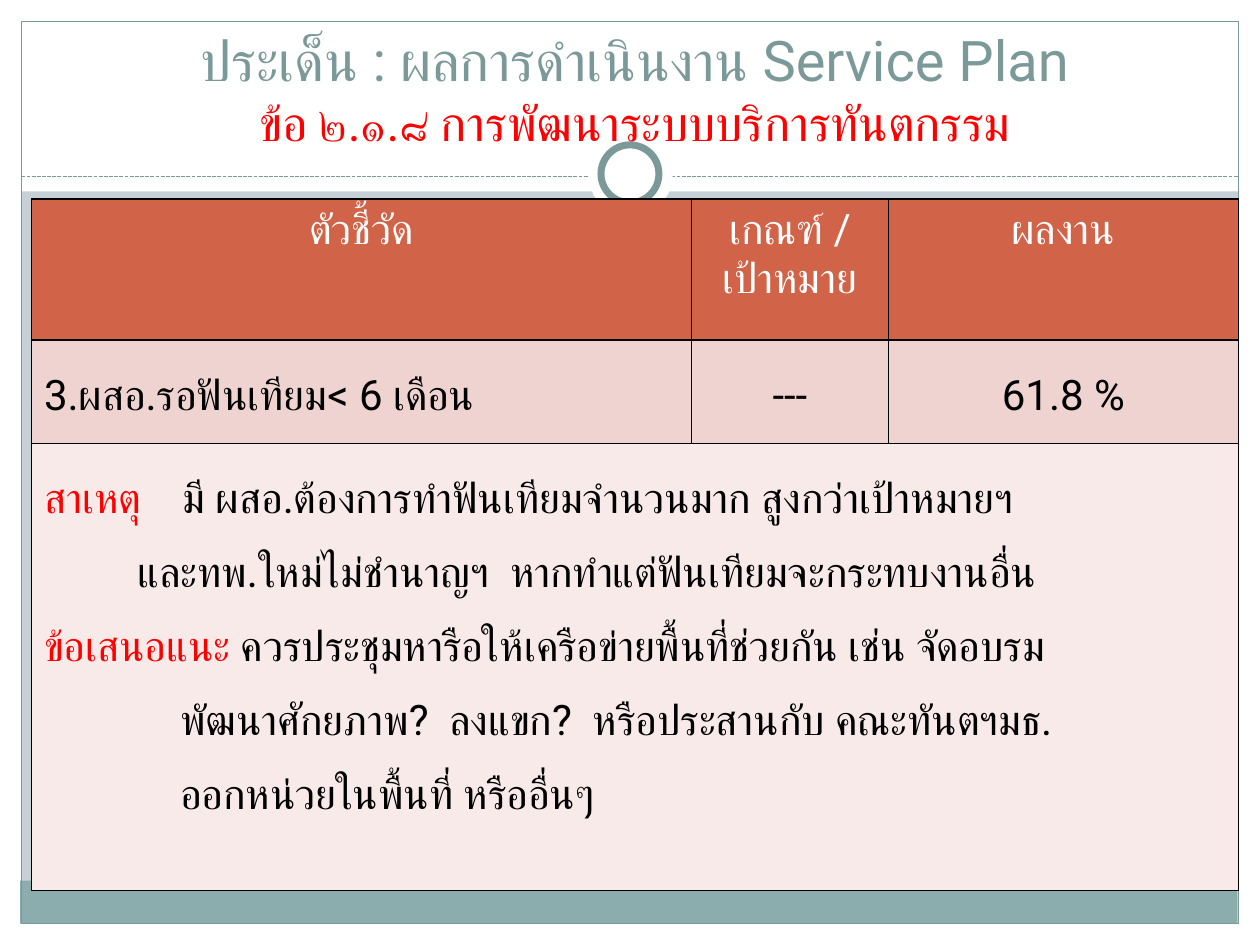
import pptx
import pptx.util
import pptx.dml.color
import pptx.enum.dml
import pptx.enum.shapes
import pptx.enum.text
import lxml.etree

Inches, Pt = pptx.util.Inches, pptx.util.Pt
SHAPE = pptx.enum.shapes.MSO_SHAPE
ALIGN = pptx.enum.text.PP_ALIGN
NS = "{http://schemas.openxmlformats.org/drawingml/2006/main}"
TEAL, RED, BLACK, WHITE = "7C999A", "FF0000", "000000", "FFFFFF"


def color(value):
    return pptx.dml.color.RGBColor.from_string(value)


def add_text(p, text, size=24, fill=BLACK, align=ALIGN.LEFT, spacing=None):
    p.alignment = align
    p.line_spacing = spacing
    r = p.add_run()
    r.text = text
    r.font.size = Pt(size)
    r.font.name = "Roboto"
    r.font.color.rgb = color(fill)
    lxml.etree.SubElement(r.font._element, NS + "cs", typeface="Roboto")


prs = pptx.Presentation()
prs.slide_width, prs.slide_height = Inches(10), Inches(7.5)
s = prs.slides.add_slide(prs.slide_layouts[5])
s.background.fill.solid()
s.background.fill.fore_color.rgb = color("C5D1D7")

frame = [
    (SHAPE.RECTANGLE, 0, 7.33, 10, 0.17, WHITE, None, 0),
    (SHAPE.RECTANGLE, 0, 0, 10, 1.52, WHITE, None, 0),
    (SHAPE.RECTANGLE, 0, 0, 0.17, 7.5, WHITE, None, 0),
    (SHAPE.RECTANGLE, 9.83, 0, 0.17, 7.5, WHITE, None, 0),
    (SHAPE.RECTANGLE, 0.16, 6.99, 9.66, 0.34, "8CADAE", None, 0),
    (SHAPE.RECTANGLE, 0.17, 0.17, 9.66, 7.16, None, TEAL, 0.75),
    (SHAPE.OVAL, 4.67, 1.05, 0.67, 0.67, WHITE, None, 0),
    (SHAPE.OVAL, 4.77, 1.15, 0.46, 0.46, WHITE, TEAL, 4),
]
for kind, x, y, w, h, fill, line, width in frame:
    if kind == SHAPE.OVAL and line is None:
        rule = s.shapes.add_connector(
            pptx.enum.shapes.MSO_CONNECTOR.STRAIGHT,
            Inches(0.17), Inches(1.4), Inches(9.83), Inches(1.4))
        rule.line.color.rgb = color(TEAL)
        rule.line.width = Pt(0.75)
        rule.line.dash_style = pptx.enum.dml.MSO_LINE.SQUARE_DOT
        lxml.etree.SubElement(rule._element.spPr, NS + "effectLst")
    sp = s.shapes.add_shape(kind, Inches(x), Inches(y), Inches(w), Inches(h))
    sp.shadow.inherit = False
    if fill:
        sp.fill.solid()
        sp.fill.fore_color.rgb = color(fill)
    else:
        sp.fill.background()
    if line:
        sp.line.color.rgb = color(line)
        sp.line.width = Pt(width)
    else:
        sp.line.fill.background()

title = s.shapes.title
s.shapes.element.append(title.element)
title.left, title.top = Inches(0.25), Inches(0)
title.width, title.height = Inches(9.58), Inches(1.25)
tf = title.text_frame
tf.word_wrap = True
tf.auto_size = pptx.enum.text.MSO_AUTO_SIZE.NONE
tf.vertical_anchor = pptx.enum.text.MSO_ANCHOR.BOTTOM
p = tf.paragraphs[0]
add_text(p, "ประเด็น : ผลการดำเนินงาน Service Plan", size=32, fill=TEAL, align=ALIGN.CENTER)
p.add_line_break()
add_text(p, "ข้อ ๒.๑.๘ การพัฒนาระบบบริการทันตกรรม", size=28, fill=RED, align=ALIGN.CENTER)

table = s.shapes.add_table(3, 3, Inches(0.25), Inches(1.58), Inches(9.58), Inches(5.5)).table
for column, width in zip(table.columns, [5.24, 1.56, 2.78]):
    column.width = Inches(width)
for row, height, fill in zip(table.rows, [1.12, 0.82, 3.55], ["D16349", "EED3D0", "F7EAE9"]):
    row.height = Inches(height)
    for cell in row.cells:
        tcPr = cell._tc.get_or_add_tcPr()
        for side in ["lnL", "lnR", "lnT", "lnB"]:
            ln = lxml.etree.SubElement(tcPr, NS + side, w=str(Pt(1)))
            solid = lxml.etree.SubElement(ln, NS + "solidFill")
            lxml.etree.SubElement(solid, NS + "srgbClr", val=BLACK)
        cell.fill.solid()
        cell.fill.fore_color.rgb = color(fill)

headers = ["ตัวชี้วัด", "เกณฑ์ / เป้าหมาย", "ผลงาน"]
values = ["3.ผสอ.รอฟันเทียม< 6 เดือน", "---", "61.8 %"]
for c, (header, value) in enumerate(zip(headers, values)):
    add_text(table.cell(0, c).text_frame.paragraphs[0], header, fill=WHITE, align=ALIGN.CENTER)
    add_text(table.cell(1, c).text_frame.paragraphs[0], value,
             align=ALIGN.CENTER if c else ALIGN.LEFT, spacing=1.5)

table.cell(2, 0).merge(table.cell(2, 2))
notes = [
    ("สาเหตุ", "\tมี ผสอ.ต้องการทำฟันเทียมจำนวนมาก สูงกว่าเป้าหมายฯ", 1.1, -1.1),
    ("", "และทพ.ใหม่ไม่ชำนาญฯ  หากทำแต่ฟันเทียมจะกระทบงานอื่น", 0.74, 0),
    ("ข้อเสนอแนะ", " ควรประชุมหารือให้เครือข่ายพื้นที่ช่วยกัน เช่น จัดอบรม", 0, 0),
    ("", "พัฒนาศักยภาพ?  ลงแขก?  หรือประสานกับ คณะทันตฯมธ.", 1.08, 0),
    ("", "ออกหน่วยในพื้นที่ หรืออื่นๆ", 1.08, 0),
]
tf = table.cell(2, 0).text_frame
for i, (label, text, margin, indent) in enumerate(notes):
    p = tf.add_paragraph() if i else tf.paragraphs[0]
    if label:
        add_text(p, label, fill=RED, spacing=1.5)
    add_text(p, text, spacing=1.5)
    pPr = p._p.get_or_add_pPr()
    pPr.set("marL", str(Inches(margin)))
    pPr.set("indent", str(Inches(indent)))

prs.save("out.pptx")
